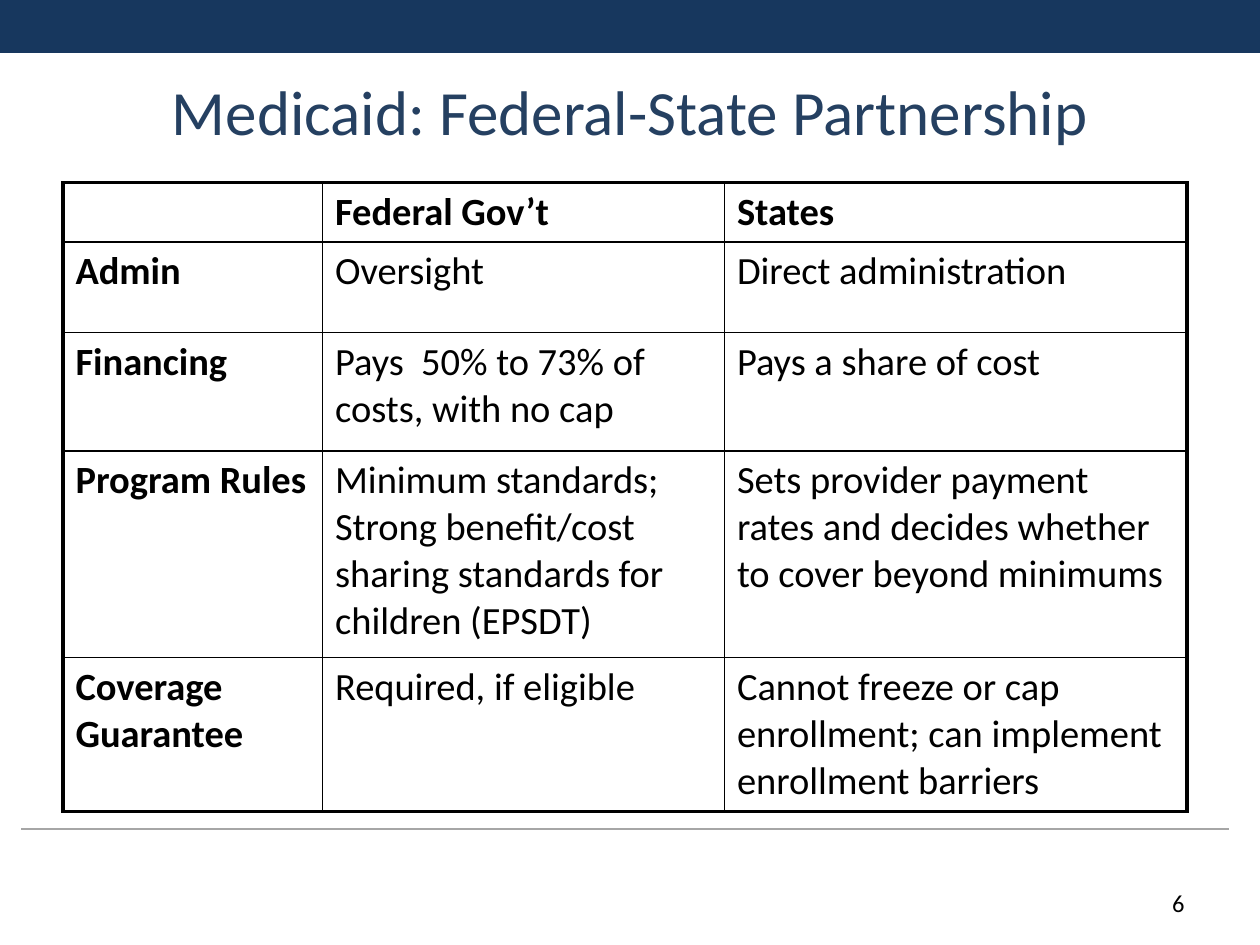
from dataclasses import dataclass

from lxml import etree
from pptx import Presentation
from pptx import util as u
from pptx.dml.color import RGBColor
from pptx.enum import shapes, text
from pptx.oxml.ns import qn


@dataclass(frozen=True)
class Theme:
    face: str = "Calibri"
    bar: str = "17375E"
    title: str = "254061"
    ink: str = "000000"
    rule: str = "A6A6A6"
    head_size: float = 36
    cell_size: float = 22
    page_size: float = 14
    thin: float = 1
    thick: float = 2.25


class Deck:
    def __init__(self, slide, theme):
        self.slide = slide
        self.theme = theme

    def style(self, para, size, color, bold=False):
        for run in para.runs:
            font = run.font
            font.name, font.size, font.bold = self.theme.face, u.Pt(size), bold
            font.color.rgb = RGBColor.from_string(color)

    def bar(self, *box):
        shape = self.slide.shapes.add_shape(
            shapes.MSO_SHAPE.RECTANGLE, *map(u.Inches, box))
        shape.shadow.inherit = False
        shape.fill.solid()
        shape.fill.fore_color.rgb = RGBColor.from_string(self.theme.bar)
        shape.line.fill.background()

    def rule(self, *ends):
        line = self.slide.shapes.add_connector(
            shapes.MSO_CONNECTOR.STRAIGHT, *map(u.Inches, ends))
        line.line.color.rgb = RGBColor.from_string(self.theme.rule)
        line.line.width = u.Pt(0.75)
        etree.SubElement(line._element.spPr, qn("a:effectLst"))

    def label(self, box, words, size, color, align, anchor):
        frame = self.slide.shapes.add_textbox(*map(u.Inches, box)).text_frame
        frame.word_wrap = True
        frame.vertical_anchor = anchor
        frame.text = words
        para = frame.paragraphs[0]
        para.alignment = align
        self.style(para, size, color)

    def edge(self, cell, side, width):
        props = cell._tc.get_or_add_tcPr()
        line = etree.SubElement(props, qn(f"a:ln{side}"), w=str(u.Pt(width)))
        fill = etree.SubElement(line, qn("a:solidFill"))
        etree.SubElement(fill, qn("a:srgbClr"), val=self.theme.ink)

    def table(self, left, top, cols, rows, data):
        grid = self.slide.shapes.add_table(
            len(rows), len(cols), u.Inches(left), u.Inches(top),
            u.Inches(sum(cols)), u.Inches(sum(rows))).table
        grid.first_row = grid.horz_banding = False
        for col, width in zip(grid.columns, cols):
            col.width = u.Inches(width)
        for row, height in zip(grid.rows, rows):
            row.height = u.Inches(height)
        for r, line in enumerate(data):
            for c, words in enumerate(line):
                cell = grid.cell(r, c)
                cell.text_frame.text = words
                self.style(cell.text_frame.paragraphs[0], self.theme.cell_size,
                           self.theme.ink, bold=r == 0 or c == 0)
                # Thick outer frame, thin inner lines
                outer = {"L": c == 0, "R": c == len(cols) - 1,
                         "T": r == 0, "B": r == len(rows) - 1}
                for side, out in outer.items():
                    self.edge(cell, side,
                              self.theme.thick if out else self.theme.thin)
                cell.fill.background()


ROWS = [
    ("", "Federal Gov’t", "States"),
    ("Admin", "Oversight", "Direct administration"),
    ("Financing", "Pays  50% to 73% of costs, with no cap",
     "Pays a share of cost"),
    ("Program Rules",
     "Minimum standards; Strong benefit/cost sharing standards for "
     "children (EPSDT)",
     "Sets provider payment rates and decides whether to cover beyond "
     "minimums"),
    ("Coverage Guarantee", "Required, if eligible",
     "Cannot freeze or cap enrollment; can implement enrollment barriers"),
]


def main():
    show = Presentation()
    show.slide_width, show.slide_height = u.Inches(10), u.Inches(7.5)
    theme = Theme()
    deck = Deck(show.slides.add_slide(show.slide_layouts[6]), theme)

    # Top band and footer rule
    deck.bar(0, 0, 10, 0.42)
    deck.rule(0.17, 6.58, 9.75, 6.58)

    # Title
    deck.label((0.75, 0.25, 8.5, 1.25), "Medicaid: Federal-State Partnership",
               theme.head_size, theme.title,
               text.PP_ALIGN.CENTER, text.MSO_ANCHOR.MIDDLE)

    # Roles by level of government
    deck.table(0.5, 1.45, (2.06, 3.19, 3.67),
               (0.47, 0.72, 0.94, 1.64, 1.22), ROWS)

    # Page number
    deck.label((7.17, 7, 2.33, 0.4), "6", theme.page_size, theme.ink,
               text.PP_ALIGN.RIGHT, text.MSO_ANCHOR.TOP)

    show.save("out.pptx")


if __name__ == "__main__":
    main()
